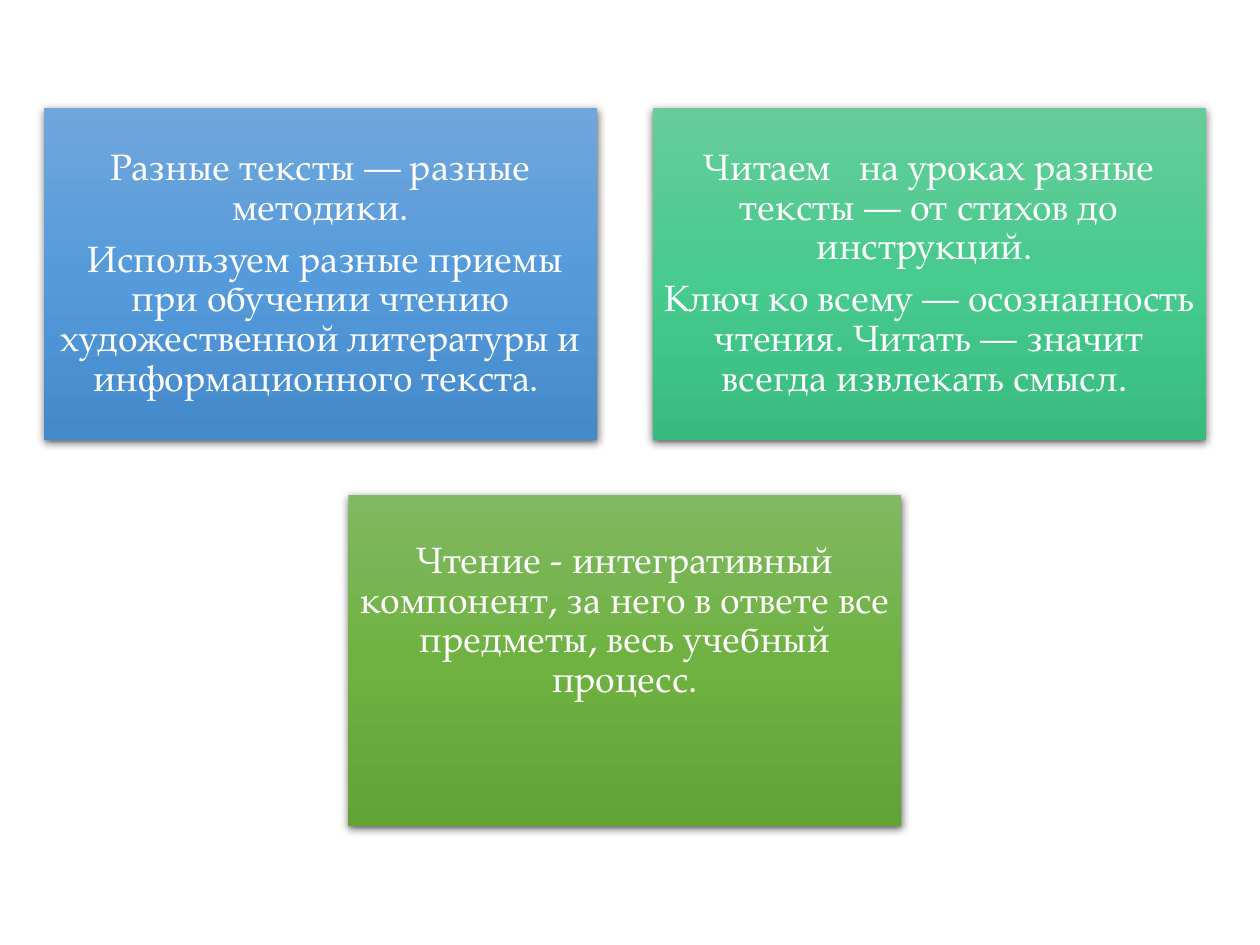
from copy import deepcopy

from lxml import etree
from pptx import Presentation
from pptx.dml.color import RGBColor
from pptx.enum.shapes import MSO_SHAPE
from pptx.enum.text import MSO_ANCHOR, PP_ALIGN
from pptx.oxml.ns import qn
from pptx.util import Inches, Pt

RECT = MSO_SHAPE.RECTANGLE
MIDDLE = MSO_ANCHOR.MIDDLE
CENTER = PP_ALIGN.CENTER

FONT = "TeX Gyre Pagella"
COLORS = {
    "blue": ("71A6DB", "559BDB", "448ACA"),
    "mint": ("67CC9A", "47CB8E", "39BB7F"),
    "green": ("81B861", "6FB242", "62A336"),
    "text": "FFFFFF",
    "shadow": "000000",
}

# Card grid, in inches
LEFT, TOP = 0.35, 0.86
WIDTH, HEIGHT, GAP = 4.39, 2.63, 0.44
INSET = 0.09
RAISED = 0.72  # bottom inset that lifts the text by one line

# Column, row, colour, bottom inset, paragraphs
CARDS = [
    (0, 0, "blue", INSET, [
        "Разные тексты — разные методики.",
        " Используем разные приемы при обучении чтению художественной "
        "литературы и информационного текста. ",
    ]),
    (1, 0, "mint", INSET, [
        "Читаем   на уроках разные тексты — от стихов до инструкций. ",
        "Ключ ко всему — осознанность чтения. Читать — значит всегда "
        "извлекать смысл. ",
    ]),
    (0.5, 1, "green", RAISED, [
        "Чтение - интегративный компонент, за него в ответе все "
        "предметы, весь учебный процесс.",
    ]),
]


def shade(shape, tones):
    """Fill the shape from top to bottom with three evenly spaced tones."""
    fill = shape.fill
    fill.gradient()
    fill.gradient_angle = 270
    stops = shape._element.spPr.find(".//" + qn("a:gsLst"))
    stops.append(deepcopy(stops[0]))
    for i, (stop, tone) in enumerate(zip(fill.gradient_stops, tones)):
        stop.position = i / 2
        stop.color.rgb = RGBColor.from_string(tone)


def add_shadow(shape):
    shape.shadow.inherit = False
    effects = shape._element.spPr.find(qn("a:effectLst"))
    outer = etree.SubElement(
        effects, qn("a:outerShdw"), blurRad=str(Pt(4.5)),
        dist=str(Pt(1.5)), dir="5400000", algn="ctr", rotWithShape="0")
    color = etree.SubElement(outer, qn("a:srgbClr"), val=COLORS["shadow"])
    etree.SubElement(color, qn("a:alpha"), val="63000")


def write(frame, texts, bottom):
    frame.word_wrap = True
    frame.vertical_anchor = MIDDLE
    frame.margin_left = frame.margin_right = frame.margin_top = Inches(INSET)
    frame.margin_bottom = Inches(bottom)
    for i, text in enumerate(texts):
        para = frame.add_paragraph() if i else frame.paragraphs[0]
        para.alignment = CENTER
        para.line_spacing = 0.9
        para.space_after = Pt(7)
        run = para.add_run()
        run.text = text
        run.font.name = FONT
        run.font.size = Pt(21)
        run.font.color.rgb = RGBColor.from_string(COLORS["text"])


def add_card(slide, col, row, color, bottom, texts):
    x = LEFT + col * (WIDTH + GAP)
    y = TOP + row * (HEIGHT + GAP)
    card = slide.shapes.add_shape(
        RECT, Inches(x), Inches(y), Inches(WIDTH), Inches(HEIGHT))
    shade(card, COLORS[color])
    card.line.fill.background()
    add_shadow(card)
    write(card.text_frame, texts, bottom)


def main():
    deck = Presentation()
    deck.slide_width, deck.slide_height = Inches(10), Inches(7.5)
    slide = deck.slides.add_slide(deck.slide_layouts[6])
    for card in CARDS:
        add_card(slide, *card)
    deck.save("out.pptx")


if __name__ == "__main__":
    main()
